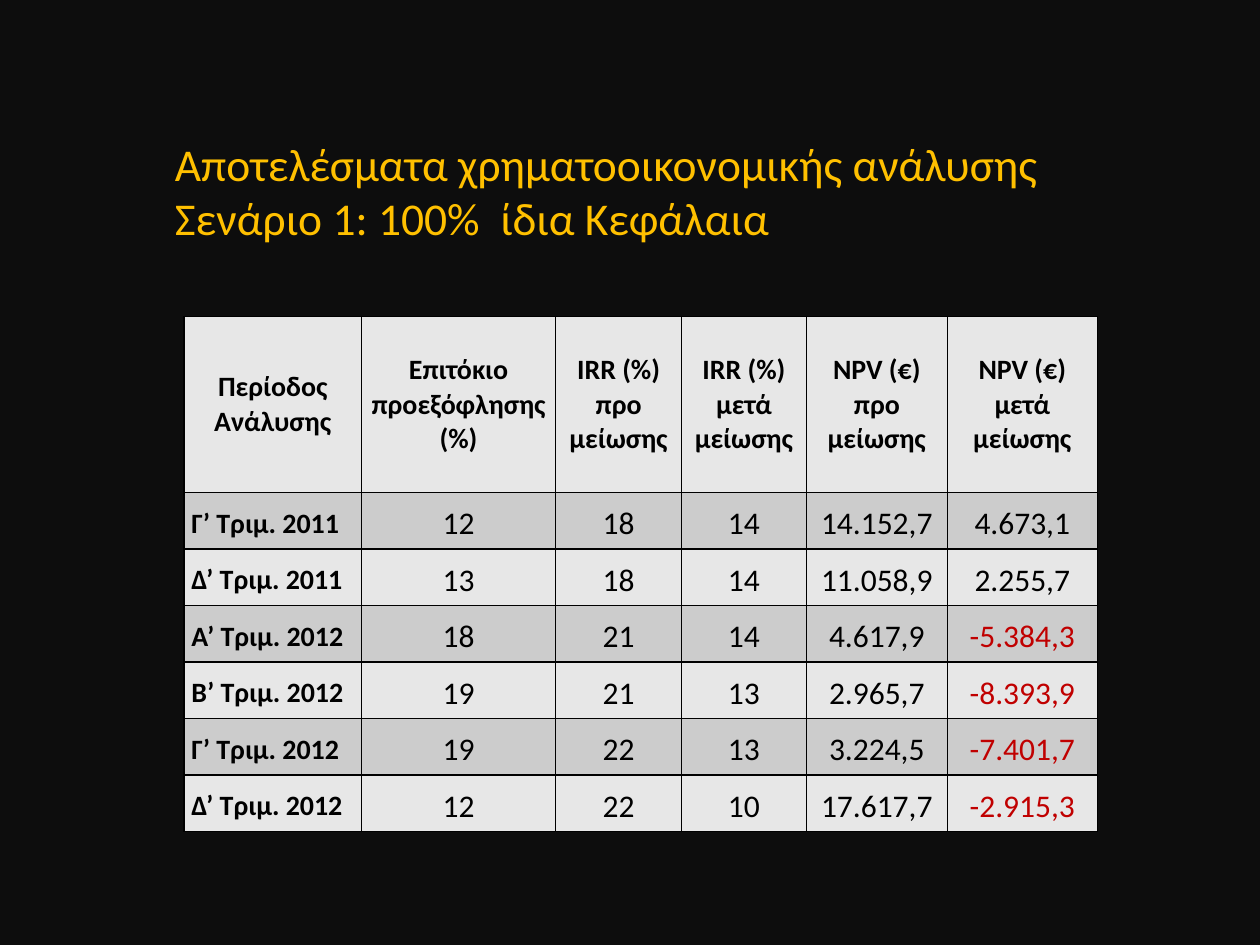
from dataclasses import dataclass

from lxml.etree import SubElement
from pptx import Presentation
from pptx.dml.color import RGBColor as Color
from pptx.enum.text import MSO_ANCHOR as Anchor, MSO_AUTO_SIZE as AutoSize, PP_ALIGN as Align
from pptx.oxml.ns import qn
from pptx.util import Inches, Pt


@dataclass(frozen=True)
class Theme:
    font: str = "Calibri"
    background: str = "0D0D0D"
    title: str = "FFC000"
    text: str = "000000"
    negative: str = "C00000"
    border: str = "000000"
    light_band: str = "E7E7E7"
    dark_band: str = "CCCCCC"
    title_size: int = 26
    label_size: int = 16
    value_size: int = 18


THEME = Theme()
SLIDE_WIDTH, SLIDE_HEIGHT = Inches(10), Inches(7.5)

TITLE = ["Αποτελέσματα χρηματοοικονομικής ανάλυσης", "Σενάριο 1: 100%  ίδια Κεφάλαια"]
HEADERS = [
    "Περίοδος Ανάλυσης", "Επιτόκιο προεξόφλησης (%)",
    "IRR (%) προ μείωσης", "IRR (%) μετά μείωσης",
    "NPV (€) προ μείωσης", "NPV (€) μετά μείωσης",
]
RESULTS = [
    ["Γ’ Τριμ. 2011", "12", "18", "14", "14.152,7", "4.673,1"],
    ["Δ’ Τριμ. 2011", "13", "18", "14", "11.058,9", "2.255,7"],
    ["Α’ Τριμ. 2012", "18", "21", "14", "4.617,9", "-5.384,3"],
    ["Β’ Τριμ. 2012", "19", "21", "13", "2.965,7", "-8.393,9"],
    ["Γ’ Τριμ. 2012", "19", "22", "13", "3.224,5", "-7.401,7"],
    ["Δ’ Τριμ. 2012", "12", "22", "10", "17.617,7", "-2.915,3"],
]
# Shares of the slide, in percent
COLUMN_WIDTHS = [14.1, 15.4, 10, 9.9, 11.2, 11.9]
HEADER_HEIGHT, RESULT_HEIGHT = 18.67, 5.98


def across(percent):
    return round(SLIDE_WIDTH * percent / 100)


def down(percent):
    return round(SLIDE_HEIGHT * percent / 100)


def set_font(paragraph, size, color, bold=False):
    font = paragraph.font
    font.name, font.size, font.bold = THEME.font, Pt(size), bold
    font.color.rgb = Color.from_string(color)


def add_title(slide):
    box = slide.shapes.add_textbox(across(12.9), down(13.73), across(74.3), down(13.07))
    frame = box.text_frame
    frame.word_wrap = True
    frame.auto_size = AutoSize.SHAPE_TO_FIT_TEXT
    frame.text = "\n".join(TITLE)
    for paragraph in frame.paragraphs:
        set_font(paragraph, THEME.title_size, THEME.title)


def add_borders(cell):
    properties = cell._tc.get_or_add_tcPr()
    for position, side in enumerate(("lnL", "lnR", "lnT", "lnB")):
        line = SubElement(properties, qn(f"a:{side}"), w=str(Pt(1)))
        fill = SubElement(line, qn("a:solidFill"))
        SubElement(fill, qn("a:srgbClr"), val=THEME.border)
        properties.insert(position, line)  # the schema wants lines before the fill


def fill_cell(cell, text, row, column):
    is_header, is_label = row == 0, column == 0
    cell.text = text
    cell.vertical_anchor = Anchor.MIDDLE
    cell.margin_left = cell.margin_right = Inches(0.06)
    cell.margin_top = cell.margin_bottom = 0
    cell.fill.solid()
    cell.fill.fore_color.rgb = Color.from_string(THEME.dark_band if row % 2 else THEME.light_band)
    add_borders(cell)

    paragraph = cell.text_frame.paragraphs[0]
    paragraph.alignment = Align.JUSTIFY if is_label and not is_header else Align.CENTER
    if not is_header:
        paragraph.line_spacing = 1.15
    bold = is_header or is_label
    set_font(
        paragraph,
        THEME.label_size if bold else THEME.value_size,
        THEME.negative if text.startswith("-") else THEME.text,
        bold,
    )


def add_results_table(slide):
    rows = [HEADERS, *RESULTS]
    row_heights = [HEADER_HEIGHT] + [RESULT_HEIGHT] * len(RESULTS)
    table = slide.shapes.add_table(
        len(rows), len(HEADERS), across(14.6), down(33.47),
        across(sum(COLUMN_WIDTHS)), down(sum(row_heights)),
    ).table
    for column, width in zip(table.columns, COLUMN_WIDTHS):
        column.width = across(width)
    for row, height in zip(table.rows, row_heights):
        row.height = down(height)
    for row_index, texts in enumerate(rows):
        for column_index, text in enumerate(texts):
            fill_cell(table.cell(row_index, column_index), text, row_index, column_index)


def main():
    presentation = Presentation()
    presentation.slide_width, presentation.slide_height = SLIDE_WIDTH, SLIDE_HEIGHT
    slide = presentation.slides.add_slide(presentation.slide_layouts[6])
    slide.background.fill.solid()
    slide.background.fill.fore_color.rgb = Color.from_string(THEME.background)
    add_title(slide)
    add_results_table(slide)
    presentation.save("out.pptx")


if __name__ == "__main__":
    main()
